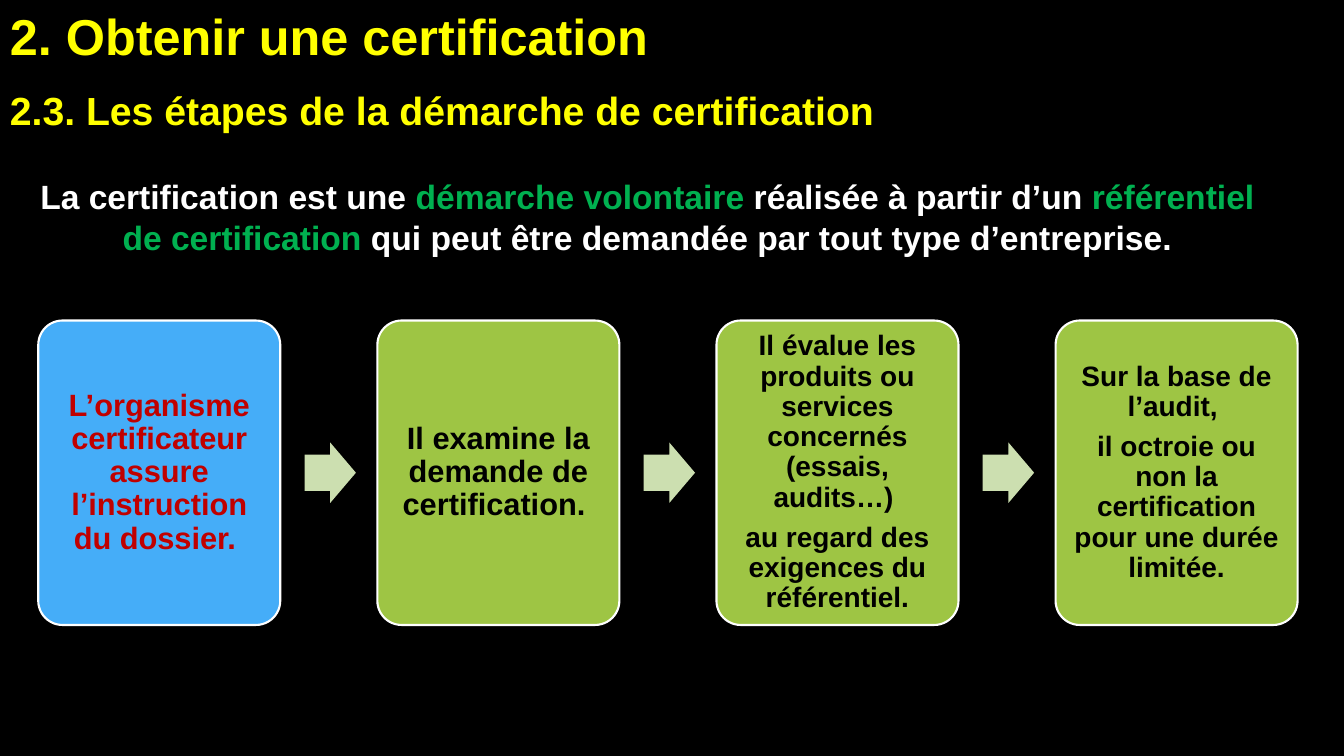
from dataclasses import dataclass

from pptx import Presentation
from pptx.dml.color import RGBColor
from pptx.enum.shapes import MSO_SHAPE as Preset
from pptx.enum.text import MSO_ANCHOR as Anchor, PP_ALIGN as Align
from pptx.util import Inches, Pt


@dataclass(frozen=True)
class Theme:
    font: str = "Arial"
    background: str = "000000"
    heading: str = "FFFF00"
    body: str = "FFFFFF"
    emphasis: str = "00B050"
    first_card: str = "45ADF8"
    first_text: str = "C00000"
    card: str = "9EC544"
    card_text: str = "000000"
    outline: str = "FFFFFF"
    arrow: str = "CCDFB0"
    title_size: int = 36
    subtitle_size: int = 28
    body_size: int = 24
    card_size: int = 22
    small_card_size: int = 20


THEME = Theme()

INTRODUCTION = [
    ("La certification est une ", THEME.body),
    ("démarche volontaire ", THEME.emphasis),
    ("réalisée à partir d’un ", THEME.body),
    ("référentiel de certification", THEME.emphasis),
    (" qui peut être demandée par tout type d’entreprise.", THEME.body),
]

STEPS = [
    ["L’organisme certificateur assure l’instruction du dossier. "],
    ["Il examine la demande de certification. "],
    [
        "Il évalue les produits ou services concernés (essais, audits…) ",
        "au regard des exigences du référentiel.",
    ],
    [
        "Sur la base de l’audit, ",
        "il octroie ou non la certification pour une durée limitée.",
    ],
]


def format_run(run, size, color):
    run.font.name = THEME.font
    run.font.size = Pt(size)
    run.font.bold = True
    run.font.color.rgb = RGBColor.from_string(color)


def add_text(slide, box, parts, size, wrap=True):
    shape = slide.shapes.add_textbox(*map(Inches, box))
    shape.text_frame.word_wrap = wrap
    paragraph = shape.text_frame.paragraphs[0]
    for text, color in parts:
        run = paragraph.add_run()
        run.text = text
        format_run(run, size, color)
    return paragraph


def add_preset(slide, preset, box, fill, adjustments):
    shape = slide.shapes.add_shape(preset, *map(Inches, box))
    shape.shadow.inherit = False
    shape.fill.solid()
    shape.fill.fore_color.rgb = RGBColor.from_string(fill)
    shape.line.fill.background()
    for index, value in enumerate(adjustments):
        shape.adjustments[index] = value
    return shape


def add_headings(slide, box):
    left, top, width, height = box
    title = add_text(
        slide, (left, top, width, 0.71),
        [("2. Obtenir une certification", THEME.heading)], THEME.title_size,
    )
    title.space_before = title.space_after = Pt(3)
    add_text(
        slide, (left, top + height - 0.57, width, 0.57),
        [("2.3. Les étapes de la démarche de certification", THEME.heading)],
        THEME.subtitle_size, wrap=False,
    )


def add_introduction(slide, box):
    paragraph = add_text(slide, box, INTRODUCTION, THEME.body_size)
    paragraph.alignment = Align.CENTER
    paragraph.space_before = Pt(18)


def add_card(slide, box, paragraphs, fill, color):
    card = add_preset(slide, Preset.ROUNDED_RECTANGLE, box, fill, [0.1])
    card.line.color.rgb = RGBColor.from_string(THEME.outline)
    card.line.width = Pt(1.5)
    several = len(paragraphs) > 1
    size = THEME.small_card_size if several else THEME.card_size
    margin = Inches(0.08 if several else 0.09)
    frame = card.text_frame
    frame.word_wrap = True
    frame.vertical_anchor = Anchor.MIDDLE
    frame.margin_left = frame.margin_right = margin
    frame.margin_top = frame.margin_bottom = margin
    frame.text = "\n".join(paragraphs)
    for paragraph in frame.paragraphs:
        paragraph.alignment = Align.CENTER
        paragraph.line_spacing = 0.9
        paragraph.space_after = Pt(round(size * 0.35))
        format_run(paragraph.runs[0], size, color)


def add_process(slide, box):
    left, top, width, height = box
    card_width, arrow_width, arrow_height = 2.4, 0.51, 0.6
    pitch = (width - card_width) / (len(STEPS) - 1)
    for index, paragraphs in enumerate(STEPS):
        x = left + index * pitch
        if index:
            arrow_box = (
                x - pitch + card_width + 0.24,
                top + (height - arrow_height) / 2,
                arrow_width,
                arrow_height,
            )
            add_preset(slide, Preset.RIGHT_ARROW, arrow_box, THEME.arrow, [0.6, 0.5])
        fill = THEME.card if index else THEME.first_card
        color = THEME.card_text if index else THEME.first_text
        add_card(slide, (x, top, card_width, height), paragraphs, fill, color)


def main():
    presentation = Presentation()
    presentation.slide_width = Inches(13.33)
    presentation.slide_height = Inches(7.5)
    slide = presentation.slides.add_slide(presentation.slide_layouts[6])
    slide.background.fill.solid()
    slide.background.fill.fore_color.rgb = RGBColor.from_string(THEME.background)
    add_headings(slide, (0, 0, 9.13, 1.38))
    add_introduction(slide, (0.21, 1.7, 12.42, 0.91))
    add_process(slide, (0.38, 3.18, 12.49, 3.02))
    presentation.save("out.pptx")


if __name__ == "__main__":
    main()
